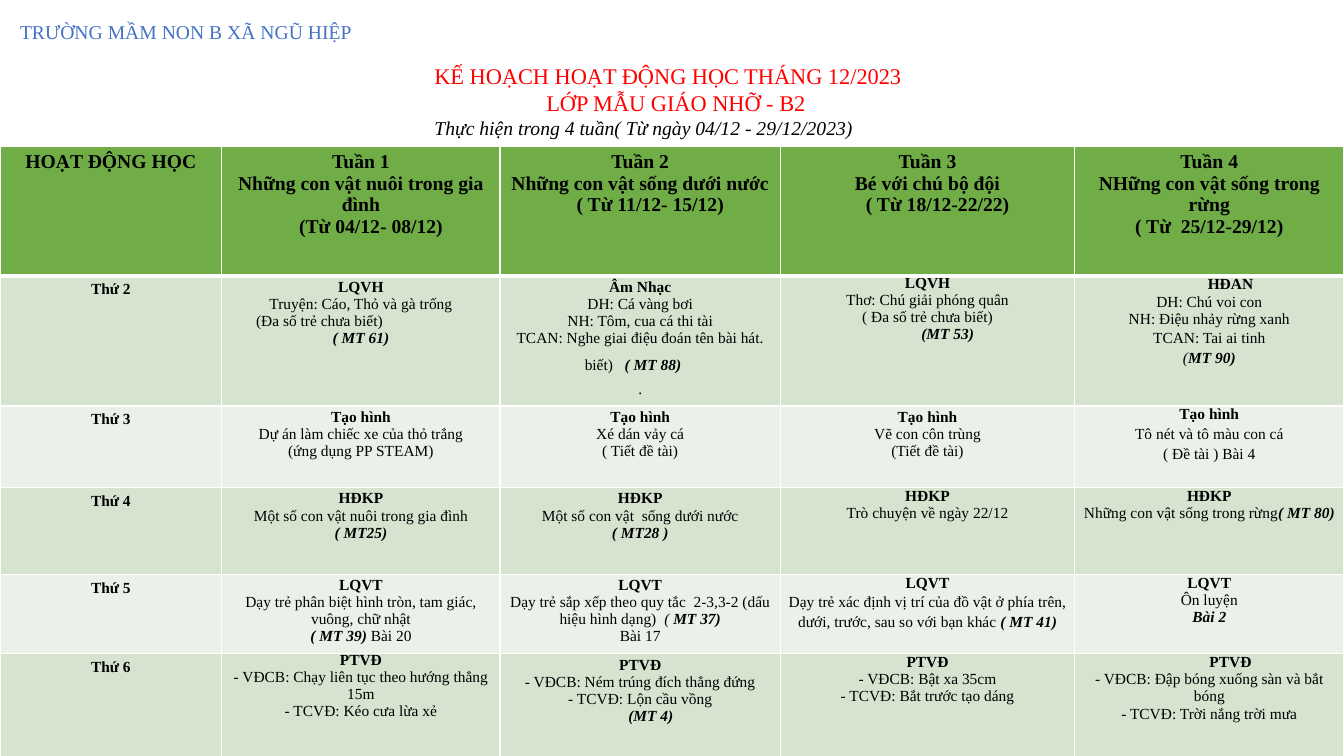
"""Builds the December 2023 weekly lesson plan slide for class B2."""
from lxml import etree
from pptx import Presentation
from pptx.dml.color import RGBColor
from pptx.enum import text
from pptx.oxml import ns
from pptx.util import Inches, Pt

HUES = {"blue": "4472C4", "red": "FF0000", "ink": "000000", "line": "FFFFFF",
        "head": "70AD47", "dark": "D5E3CF", "light": "EBF1E9"}
MARKS = {"*": (True, True), "/": (False, True), "#": (True, False)}


def write(par, line, size, hue="ink", shift=0, space=None, left=False, above=None, below=None):
    """Fill a paragraph; in each part split by |, * is bold italic, / italic, # bold."""
    par.alignment = text.PP_ALIGN.LEFT if left else text.PP_ALIGN.CENTER
    par.line_spacing = space
    par.space_before = above
    par.space_after = below
    par.font.name = "Times New Roman"
    par.font.size = Pt(size)
    par.font.color.rgb = RGBColor.from_string(HUES[hue])
    if shift:
        par._p.get_or_add_pPr().set("marL", str(Inches(shift)))
    for part in line.split("|"):
        run = par.add_run()
        run.text = part[1:] if part[:1] in MARKS else part
        run.font.bold, run.font.italic = MARKS.get(part[:1], (False, False))


def fill(frame, lines, size, **base):
    """Write lines as paragraphs; a line may be a pair of wording and options."""
    frame.word_wrap = True
    for i, line in enumerate(lines):
        par = frame.paragraphs[0] if i == 0 else frame.add_paragraph()
        words, opts = line if isinstance(line, tuple) else (line, {})
        write(par, words, **{"size": size, **base, **opts})


deck = Presentation()
deck.slide_width, deck.slide_height = Inches(13.33), Inches(7.5)
slide = deck.slides.add_slide(deck.slide_layouts[6])

school = slide.shapes.add_textbox(Inches(0.1), Inches(0.15), Inches(3.52), Inches(0.34))
fill(school.text_frame, ["TRƯỜNG MẦM NON B XÃ NGŨ HIỆP"], 14, hue="blue", left=True)

title = slide.shapes.add_textbox(Inches(4.21), Inches(0.57), Inches(5.61), Inches(0.88))
fill(title.text_frame, [
    "KẾ HOẠCH HOẠT ĐỘNG HỌC THÁNG 12/2023",
    ("LỚP MẪU GIÁO NHỠ - B2", {"shift": 1.11}),
    ("/Thực hiện trong 4 tuần( Từ ngày 04/12 - 29/12/2023)", {"size": 14, "hue": "ink"}),
], 16, hue="red", left=True)

loose = {"space": 1.15}
dates = {"shift": 0.2}
aside = {"shift": 0.42}

plan = [
    [["#HOẠT ĐỘNG HỌC"],
     ["#Tuần 1", "#Những con vật nuôi trong gia đình", ("#(Từ 04/12- 08/12)", dates)],
     ["#Tuần 2", "#Những con vật sống dưới nước", ("#( Từ 11/12- 15/12)", dates)],
     ["#Tuần 3", "#Bé với chú bộ đội", ("#( Từ 18/12-22/22)", dates)],
     ["#Tuần 4", "#NHững con vật sống trong rừng", "#( Từ  25/12-29/12)"]],
    [["#Thứ 2"],
     [("#LQVH", loose), "Truyện: Cáo, Thỏ và gà trống",
      ("(Đa số trẻ chưa biết)", {"left": True, "shift": 0.27}), "*( MT 61)"],
     [("#Âm Nhạc", loose), "DH: Cá vàng bơi", "NH: Tôm, cua cá thi tài",
      "TCAN: Nghe giai điệu đoán tên bài hát.",
      ("biết)   |*( MT 88)", {"left": True, "shift": 0.77, "above": Pt(7), "below": Pt(2.5)}),
      (".", {"space": 1.15, "below": Pt(10)})],
     [("#LQVH", {"space": 0.9}), "Thơ: Chú giải phóng quân", "( Đa số trẻ chưa biết)",
      ("*(MT 53)", {"shift": 0.4})],
     [("#HĐAN", aside), "DH: Chú voi con", "NH: Điệu nhảy rừng xanh",
      ("TCAN: Tai ai tinh", loose), ("/(|*MT 90)", loose)]],
    [["#Thứ 3"],
     [("#Tạo hình", loose), "Dự án làm chiếc xe của thỏ trắng", "(ứng dụng PP STEAM)"],
     [("#Tạo hình", loose), "Xé dán vảy cá", "( Tiết đề tài)"],
     [("#Tạo hình", loose), "Vẽ con côn trùng", "(Tiết đề tài)"],
     ["#Tạo hình", ("Tô nét và tô màu con cá", loose), ("( Đề tài ) Bài 4", loose)]],
    [["#Thứ 4"],
     [("#HĐKP", loose), "Một số con vật nuôi trong gia đình", "*( MT25)"],
     [("#HĐKP", loose), "Một số con vật  sống dưới nước", "*( MT28 )"],
     ["#HĐKP", "Trò chuyện về ngày 22/12"],
     ["#HĐKP", "Những con vật sống trong rừng|*( MT 80)"]],
    [["#Thứ 5"],
     [("#LQVT", loose), "Dạy trẻ phân biệt hình tròn, tam giác, vuông, chữ nhật",
      "*( MT 39) |Bài 20"],
     [("#LQVT", loose),
      "Dạy trẻ sắp xếp theo quy tắc  2-3,3-2 (dấu hiệu hình dạng) |/ ( |*MT 37)", "Bài 17"],
     ["#LQVT",
      ("Dạy trẻ xác định vị trí của đồ vật ở phía trên, dưới, trước, sau so với bạn khác "
       "|*( MT 41)", loose)],
     ["#LQVT", "Ôn luyện", "*Bài 2"]],
    [["#Thứ 6"],
     [("#PTVĐ", {"space": 0.85}), "- VĐCB: Chạy liên tục theo hướng thẳng 15m",
      "- TCVĐ: Kéo cưa lừa xẻ"],
     [("#PTVĐ", loose), "- VĐCB: Ném trúng đích thẳng đứng", "- TCVĐ: Lộn cầu vồng",
      ("*(MT 4)", {"shift": 0.21})],
     ["#PTVĐ", "- VĐCB: Bật xa 35cm", "- TCVĐ: Bắt trước tạo dáng"],
     [("#PTVĐ", aside), "- VĐCB: Đập bóng xuống sàn và bắt bóng",
      "- TCVĐ: Trời nắng trời mưa"]],
]
widths = [2.2, 2.76, 2.78, 2.92, 2.67]
heights = [1.29, 1.26, 0.81, 0.86, 0.79, 1.19]

table = slide.shapes.add_table(len(heights), len(widths), Inches(0), Inches(1.45),
                               Inches(sum(widths)), Inches(sum(heights))).table
for col, width in zip(table.columns, widths):
    col.width = Inches(width)
for r, (row, height) in enumerate(zip(plan, heights)):
    table.rows[r].height = Inches(height)
    for c, lines in enumerate(row):
        cell = table.cell(r, c)
        if r and c:
            cell.margin_left = cell.margin_right = Inches(0.07)
            cell.margin_top = cell.margin_bottom = Inches(0)
        fill(cell.text_frame, lines, 11 if r else 14)
        props = cell._tc.get_or_add_tcPr()
        for side in ("lnL", "lnR", "lnT", "lnB"):
            thick = (r, side) in ((0, "lnB"), (1, "lnT"))
            edge = etree.SubElement(props, ns.qn("a:" + side), w=str(Pt(3 if thick else 1)))
            paint = etree.SubElement(edge, ns.qn("a:solidFill"))
            etree.SubElement(paint, ns.qn("a:srgbClr"), val=HUES["line"])
        cell.fill.solid()
        shade = "head" if r == 0 else "dark" if r % 2 else "light"
        cell.fill.fore_color.rgb = RGBColor.from_string(HUES[shade])

deck.save("out.pptx")
